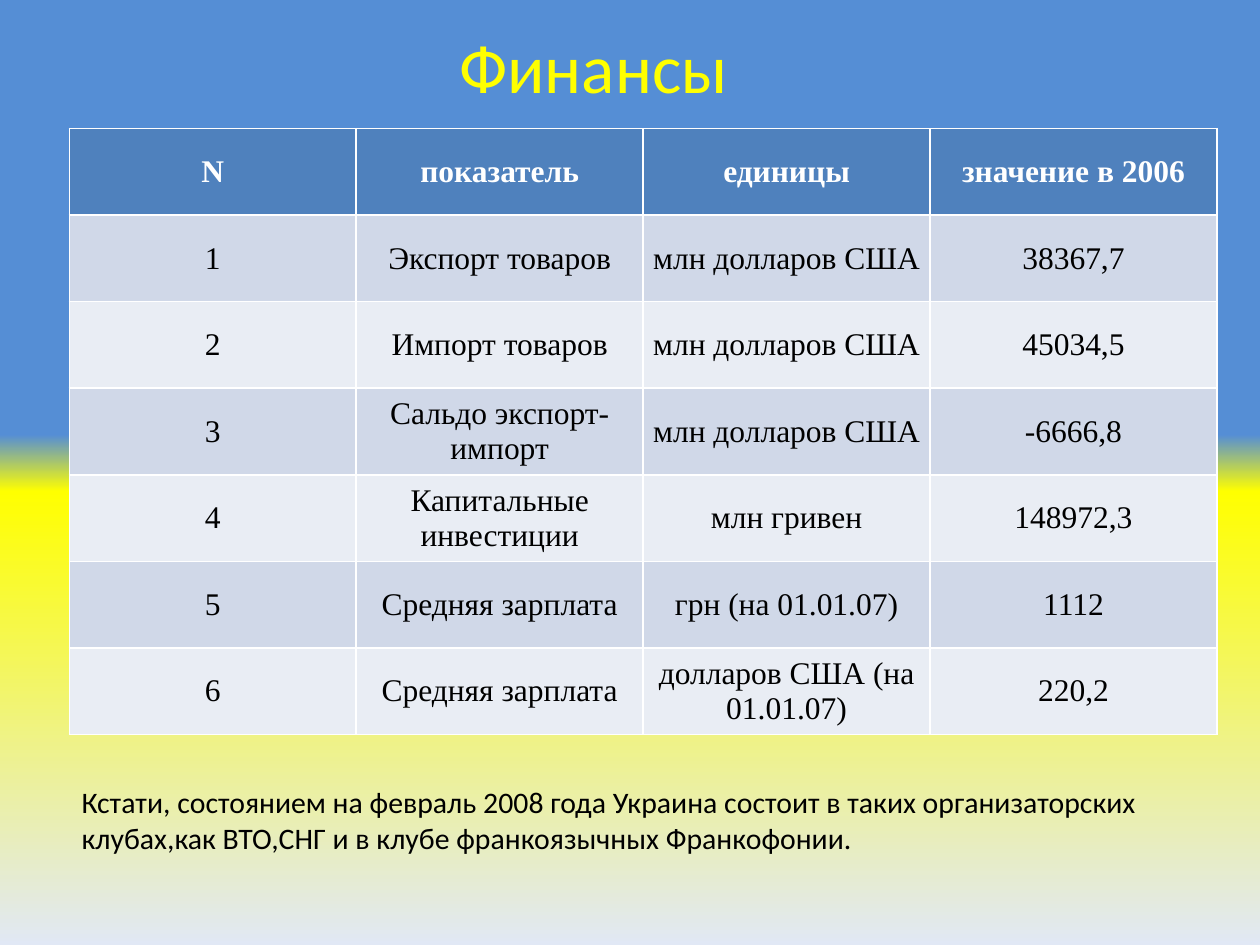
from lxml import etree
from pptx import Presentation
from pptx import util as u
from pptx.dml import color
from pptx.enum import text
from pptx.oxml import ns

WIDE, HIGH = 10, 7.5
STOPS = [(0, "558ED5"), (46, "558ED5"), (52, "FFFF00"), (100, "E1E8F5")]
HEAD, BANDS = "4F81BD", ("E9EDF4", "D0D8E8")
ROWS = [
    ("N", "показатель", "единицы", "значение в 2006"),
    ("1", "Экспорт товаров", "млн долларов США", "38367,7"),
    ("2", "Импорт товаров", "млн долларов США", "45034,5"),
    ("3", "Сальдо экспорт-импорт", "млн долларов США", "-6666,8"),
    ("4", "Капитальные инвестиции", "млн гривен", "148972,3"),
    ("5", "Средняя зарплата", "грн (на 01.01.07)", "1112"),
    ("6", "Средняя зарплата", "долларов США (на 01.01.07)", "220,2"),
]
NOTE = ("Кстати, состоянием на февраль 2008 года Украина состоит в таких "
        "организаторских клубах,как ВТО,СНГ и в клубе франкоязычных Франкофонии.")


def rgb(code):
    """Turn a hex string into a colour."""
    return color.RGBColor.from_string(code)


def style(frame, words, size, face, code, align, bold=False):
    """Fill a text frame with one formatted paragraph."""
    frame.text = words
    para = frame.paragraphs[0]
    para.alignment = align
    font = para.runs[0].font
    font.size, font.name, font.bold = u.Pt(size), face, bold
    font.color.rgb = rgb(code)


def paint(slide):
    """Give the slide its vertical gradient."""
    fill = slide.background.fill
    fill.gradient()
    fill.gradient_angle = 270
    stops = slide.element.find(".//" + ns.qn("a:gsLst"))
    for stop in list(stops):
        stops.remove(stop)
    for share, code in STOPS:
        stop = etree.SubElement(stops, ns.qn("a:gs"), pos=str(share * 1000))
        etree.SubElement(stop, ns.qn("a:srgbClr"), val=code)


def label(slide, box, anchor, *look):
    """Add a wrapped text box."""
    frame = slide.shapes.add_textbox(*map(u.Inches, box)).text_frame
    frame.word_wrap = True
    frame.vertical_anchor = anchor
    style(frame, *look)


def grid(slide, box):
    """Add the table of figures with a header and banded rows."""
    table = slide.shapes.add_table(
        len(ROWS), len(ROWS[0]), *map(u.Inches, box)).table
    for r, row in enumerate(ROWS):
        for c, words in enumerate(row):
            cell = table.cell(r, c)
            cell.margin_left = cell.margin_right = u.Inches(0.01)
            cell.margin_top = cell.margin_bottom = u.Inches(0.01)
            cell.vertical_anchor = text.MSO_ANCHOR.MIDDLE
            cell.fill.solid()
            cell.fill.fore_color.rgb = rgb(BANDS[r % 2] if r else HEAD)
            style(cell.text_frame, words, 18, "Times New Roman",
                  "000000" if r else "FFFFFF", text.PP_ALIGN.CENTER, r == 0)


def main():
    """Build and save the slide."""
    deck = Presentation()
    deck.slide_width, deck.slide_height = u.Inches(WIDE), u.Inches(HIGH)
    slide = deck.slides.add_slide(deck.slide_layouts[6])
    paint(slide)
    label(slide, (0.78, 0.16, 7.86, 0.72), text.MSO_ANCHOR.MIDDLE,
          "Финансы", 39.6, "Calibri", "FFFF00", text.PP_ALIGN.CENTER)
    grid(slide, (0.55, 1.02, 9.11, 4.81))
    label(slide, (0.55, 6.17, 8.83, 0.96), text.MSO_ANCHOR.TOP,
          NOTE, 17, "Calibri", "000000", text.PP_ALIGN.LEFT)
    deck.save("out.pptx")


if __name__ == "__main__":
    main()
